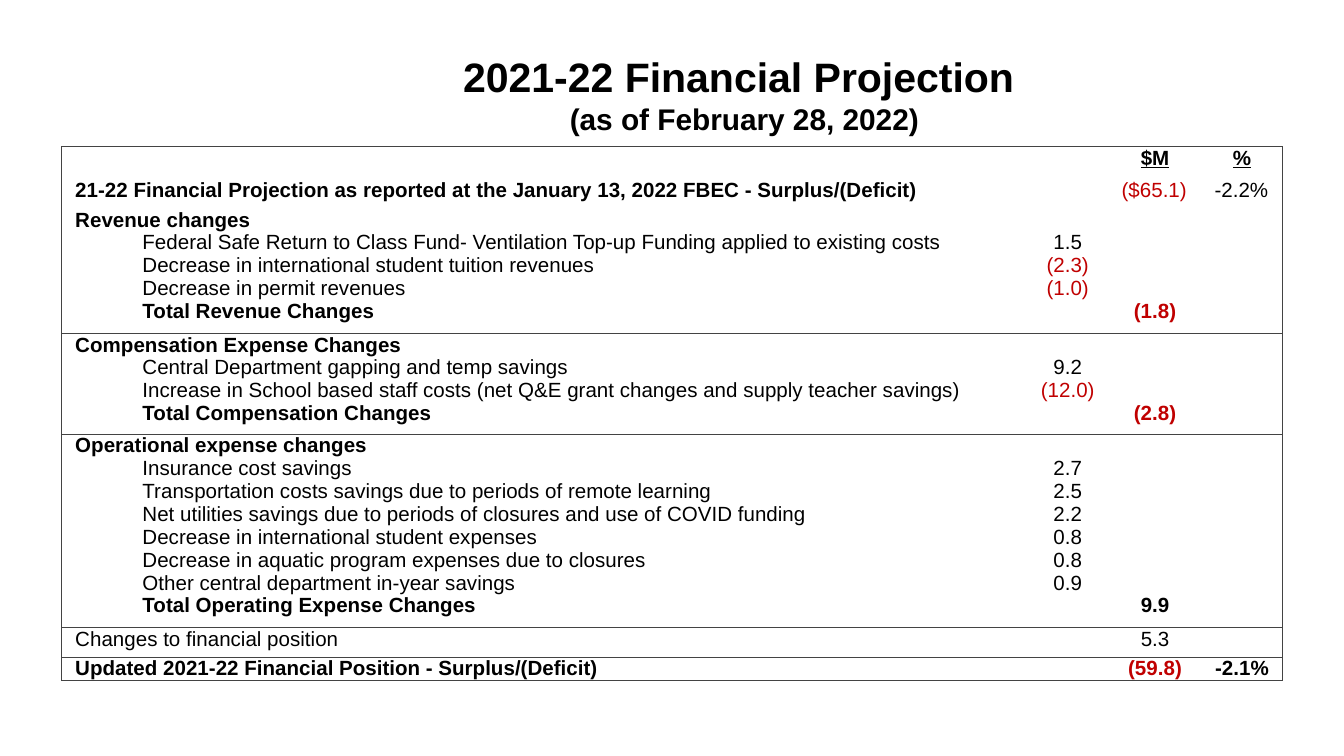
from lxml import etree
from pptx import Presentation
from pptx.dml.color import RGBColor
from pptx.enum.text import MSO_ANCHOR as Anchor, MSO_AUTO_SIZE as AutoSize, PP_ALIGN as Align
from pptx.oxml.ns import qn
from pptx.util import Pt

# Content: blocks of (style, label, detail, total, percent) lines
TITLE = [("2021-22 Financial Projection ", 22), ("(as of February 28, 2022)", 16)]
BLOCKS = [
    [("columns", "", "", "$M", "%")],
    [("opening", "21-22 Financial Projection as reported at the January 13, 2022 FBEC - Surplus/(Deficit)",
      "", "($65.1)", "-2.2%")],
    [("heading", "Revenue changes", "", "", ""),
     ("item", "Federal Safe Return to Class Fund- Ventilation Top-up Funding applied to existing costs", "1.5", "", ""),
     ("item", "Decrease in international student tuition revenues", "(2.3)", "", ""),
     ("item", "Decrease in permit revenues", "(1.0)", "", ""),
     ("total", "Total Revenue Changes", "", "(1.8)", "")],
    [("heading", "Compensation Expense Changes", "", "", ""),
     ("item", "Central Department gapping and temp savings", "9.2", "", ""),
     ("item", "Increase in School based staff costs (net Q&E grant changes and supply teacher savings)",
      "(12.0)", "", ""),
     ("total", "Total Compensation Changes", "", "(2.8)", "")],
    [("heading", "Operational expense changes", "", "", ""),
     ("item", "Insurance cost savings", "2.7", "", ""),
     ("item", "Transportation costs savings due to periods of remote learning", "2.5", "", ""),
     ("item", "Net utilities savings due to periods of closures and use of COVID funding", "2.2", "", ""),
     ("item", "Decrease in international student expenses", "0.8", "", ""),
     ("item", "Decrease in aquatic program expenses due to closures", "0.8", "", ""),
     ("item", "Other central department in-year savings", "0.9", "", ""),
     ("total", "Total Operating Expense Changes", "", "9.9", "")],
    [("plain", "Changes to financial position", "", "5.3", "")],
    [("closing", "Updated 2021-22 Financial Position - Surplus/(Deficit)", "", "(59.8)", "-2.1%")],
]
INDENTED = {"item", "total"}
BOLD_LABELS = {"opening", "heading", "total", "closing"}
BOLD_VALUES = {"columns", "total", "closing"}

# Layout
COLUMN_WIDTHS = [516.8, 43.8, 49.8, 43.4]
ROW_HEIGHTS = [17.3, 15.8, 67, 54, 103.7, 15.8, 12.6]
FIRST_RULED_ROW = 2
LINE_PITCH = 12.25
BLACK, RED, RULE = "000000", "C00000", "434343"
NO_STYLE = "{2D5ABB26-0587-4C30-8999-92F81FD0307C}"


def color(hex_code):
    return RGBColor.from_string(hex_code)


def write(paragraph, text, size=11, bold=False, underline=False, ink=BLACK,
          align=Align.LEFT, indent=0, pitch=None):
    paragraph.alignment = align
    paragraph.space_before = paragraph.space_after = Pt(0)
    paragraph.line_spacing = Pt(pitch) if pitch else 1.0
    if indent:
        paragraph._p.get_or_add_pPr().set("marL", str(Pt(indent)))
    run = paragraph.add_run()
    run.text = text
    font = run.font
    font.name, font.size, font.bold, font.underline = "Arial", Pt(size), bold, underline
    font.color.rgb = color(ink)


def next_paragraph(frame, index):
    return frame.add_paragraph() if index else frame.paragraphs[0]


def set_borders(cell, ruled_sides):
    properties = cell._tc.get_or_add_tcPr()
    for position, side in enumerate("LRTB"):
        line = etree.Element(qn(f"a:ln{side}"), w=str(Pt(0.75)))
        if side in ruled_sides:
            fill = etree.SubElement(line, qn("a:solidFill"))
            etree.SubElement(fill, qn("a:srgbClr"), val=RULE)
        else:
            etree.SubElement(line, qn("a:noFill"))
        properties.insert(position, line)


def fill_cell(cell, block, column):
    cell.margin_left, cell.margin_right = Pt(7.2), Pt(6.8)
    cell.margin_top = cell.margin_bottom = Pt(0)
    cell.vertical_anchor = Anchor.TOP
    cell.fill.background()
    entries = [(i, line[0], line[column + 1]) for i, line in enumerate(block) if line[column + 1]]
    if not entries:
        # An empty cell must not stretch its row
        etree.SubElement(cell.text_frame.paragraphs[0]._p, qn("a:endParaRPr"), sz="1000")
        return
    # Start level with the first line that has an entry
    cell.margin_top = Pt(entries[0][0] * LINE_PITCH)
    for index, (_, style, text) in enumerate(entries):
        is_label = column == 0
        write(next_paragraph(cell.text_frame, index), text,
              bold=style in (BOLD_LABELS if is_label else BOLD_VALUES),
              underline=style == "columns",
              ink=RED if text.startswith("(") else BLACK,
              align=Align.LEFT if is_label or style == "opening" else Align.CENTER,
              indent=36 if is_label and style in INDENTED else 0,
              pitch=LINE_PITCH)


deck = Presentation()
deck.slide_width, deck.slide_height = Pt(720), Pt(405)
slide = deck.slides.add_slide(deck.slide_layouts[5])

# Title
title = slide.shapes.title
title.left, title.top, title.width, title.height = Pt(116.6), Pt(12.2), Pt(564.5), Pt(76.3)
heading = title.text_frame
heading.auto_size, heading.word_wrap = AutoSize.NONE, True
heading.vertical_anchor = Anchor.MIDDLE
heading.margin_left = heading.margin_right = heading.margin_top = heading.margin_bottom = Pt(7.2)
for index, (text, size) in enumerate(TITLE):
    write(next_paragraph(heading, index), text, size=size, bold=True, align=Align.CENTER)

# Projection table
frame = slide.shapes.add_table(len(BLOCKS), len(COLUMN_WIDTHS), Pt(33.1), Pt(78.6),
                               Pt(sum(COLUMN_WIDTHS)), Pt(sum(ROW_HEIGHTS)))
projection = frame.table
projection.first_row = projection.horz_banding = False
projection._tbl.tblPr.find(qn("a:tableStyleId")).text = NO_STYLE
for column, width in zip(projection.columns, COLUMN_WIDTHS):
    column.width = Pt(width)
for row, height in zip(projection.rows, ROW_HEIGHTS):
    row.height = Pt(height)

last_column = len(COLUMN_WIDTHS) - 1
for r, block in enumerate(BLOCKS):
    for c in range(len(COLUMN_WIDTHS)):
        cell = projection.cell(r, c)
        fill_cell(cell, block, c)
        sides = {"L": c == 0, "R": c == last_column,
                 "T": r == 0 or r > FIRST_RULED_ROW, "B": r >= FIRST_RULED_ROW}
        set_borders(cell, [side for side, ruled in sides.items() if ruled])

deck.save("out.pptx")
